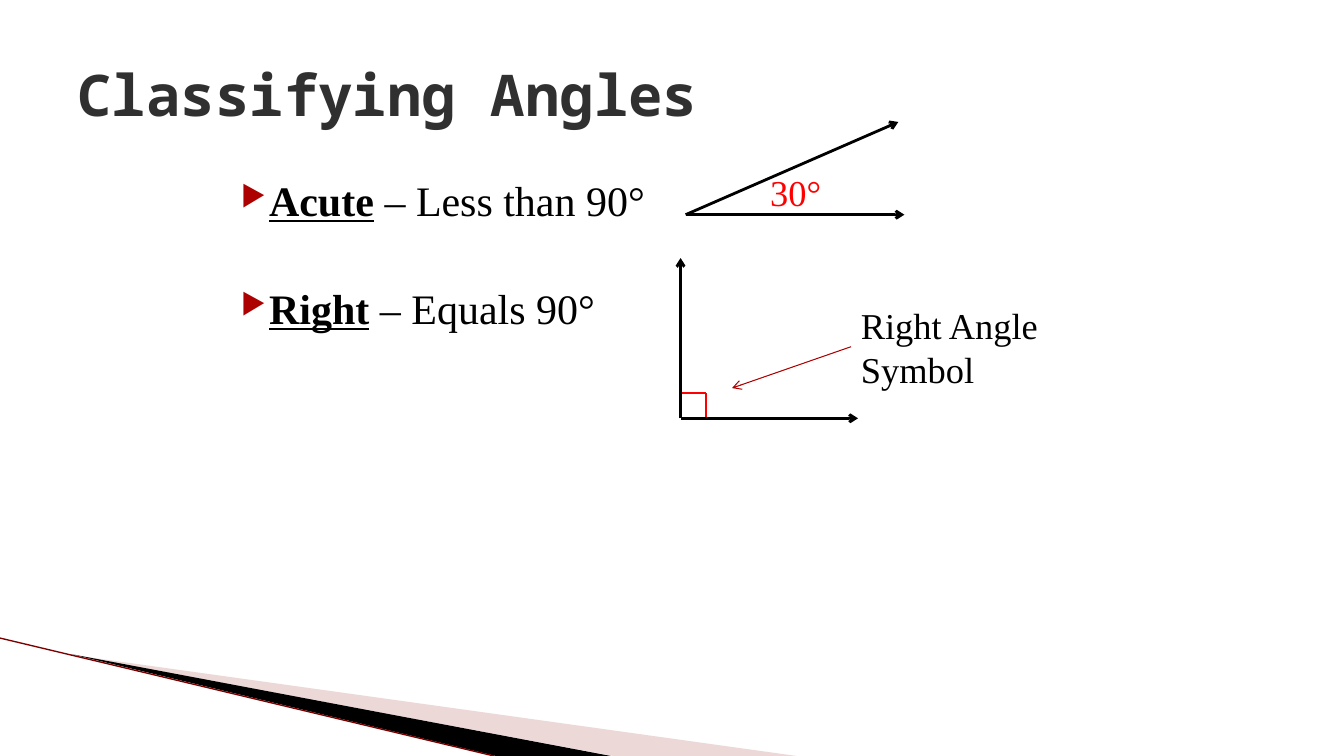
from lxml.etree import SubElement
from pptx import Presentation
from pptx.dml.color import RGBColor
from pptx.enum.shapes import MSO_CONNECTOR
from pptx.enum.text import MSO_ANCHOR
from pptx.oxml.ns import qn
from pptx.util import Inches, Pt

COLORS = {
    "black": "000000",
    "title": "303030",
    "red": "FF0000",
    "accent": "AD0101",
    "edge": "7A0000",
    "wedge": "D29E9E",
}
SERIF = "Times New Roman"
MONO = "Noto Sans Mono"


def color(name):
    return RGBColor.from_string(COLORS[name])


def add_wedge(page, points, fill, opacity=None):
    corners = [(Inches(x), Inches(y)) for x, y in points]
    builder = page.shapes.build_freeform(*corners[0])
    builder.add_line_segments(corners[1:], close=True)
    wedge = builder.convert_to_shape()
    wedge.shadow.inherit = False
    wedge.line.fill.background()
    wedge.fill.solid()
    wedge.fill.fore_color.rgb = color(fill)
    if opacity is not None:
        tint = wedge.fill._xPr.find(".//" + qn("a:srgbClr"))
        SubElement(tint, qn("a:alpha"), val=str(opacity * 1000))


def add_line(page, start, end, stroke, width, arrow=False):
    line = page.shapes.add_connector(
        MSO_CONNECTOR.STRAIGHT, *(Inches(value) for value in (*start, *end)))
    line.line.color.rgb = color(stroke)
    line.line.width = Pt(width)
    if arrow:
        SubElement(line.line._get_or_add_ln(), qn("a:tailEnd"), type="arrow")
    SubElement(line._element.spPr, qn("a:effectLst"))


def add_box(page, left, top, width, height):
    box = page.shapes.add_textbox(*map(Inches, (left, top, width, height)))
    box.text_frame.word_wrap = True
    return box.text_frame


def style(span, size, ink, font=SERIF, bold=False, underline=False):
    span.font.name = font
    span.font.size = Pt(size)
    span.font.color.rgb = color(ink)
    span.font.bold = bold
    span.font.underline = underline


def add_label(page, text, place, size, ink, **look):
    frame = add_box(page, *place)
    frame.text = text
    style(frame.paragraphs[0].runs[0], size, ink, **look)
    return frame


def set_bullet(para):
    props = para._p.get_or_add_pPr()
    props.set("marL", str(Inches(0.4)))
    props.set("indent", str(Inches(-0.28)))
    tint = SubElement(props, qn("a:buClr"))
    SubElement(tint, qn("a:srgbClr"), val=COLORS["accent"])
    SubElement(props, qn("a:buSzPct"), val="68000")
    SubElement(props, qn("a:buChar"), char="▶")


def add_definitions(page, definitions):
    frame = add_box(page, 2.17, 1.68, 4.68, 2.4)
    for index, (term, meaning) in enumerate(definitions):
        para = frame.paragraphs[0] if index == 0 else frame.add_paragraph()
        set_bullet(para)
        if index:
            para.space_before = Pt(41)
        for text, is_term in ((term, True), (f" – {meaning}", False)):
            span = para.add_run()
            span.text = text
            style(span, 30, "black", bold=is_term, underline=is_term)


def add_angle(page, vertex, ray_ends):
    for ray_end in ray_ends:
        add_line(page, vertex, ray_end, "black", 2, arrow=True)


def main():
    deck = Presentation()
    deck.slide_width, deck.slide_height = Inches(13.33), Inches(7.5)
    page = deck.slides.add_slide(deck.slide_layouts[6])

    add_wedge(page, [(0.73, 6.5), (7.9, 7.5), (6.08, 7.5)], "wedge", 40)
    add_wedge(page, [(0.71, 6.49), (6.06, 7.5), (4.92, 7.5)], "black")
    add_line(page, (0, 6.33), (4.9, 7.5), "edge", 0.95)

    title = add_label(page, "Classifying Angles", (0.67, 0.3, 12, 1.25),
                      41, "title", font=MONO, bold=True)
    title.vertical_anchor = MSO_ANCHOR.MIDDLE
    add_definitions(page, [("Acute", "Less than 90°"),
                           ("Right", "Equals 90°")])

    add_angle(page, (6.8, 2.13), [(8.97, 2.13), (8.91, 1.21)])
    add_label(page, "30°", (7.54, 1.64, 0.82, 0.54), 26, "red")

    add_angle(page, (6.75, 4.15), [(8.51, 4.15), (6.75, 2.56)])
    for end in ((6.76, 3.9), (7, 4.14)):
        add_line(page, (7, 3.9), end, "red", 1.5)

    add_label(page, "Right Angle Symbol", (8.44, 2.96, 2.96, 0.98),
              26, "black")
    add_line(page, (8.44, 3.44), (7.26, 3.85), "accent", 0.75, arrow=True)

    deck.save("out.pptx")


if __name__ == "__main__":
    main()
